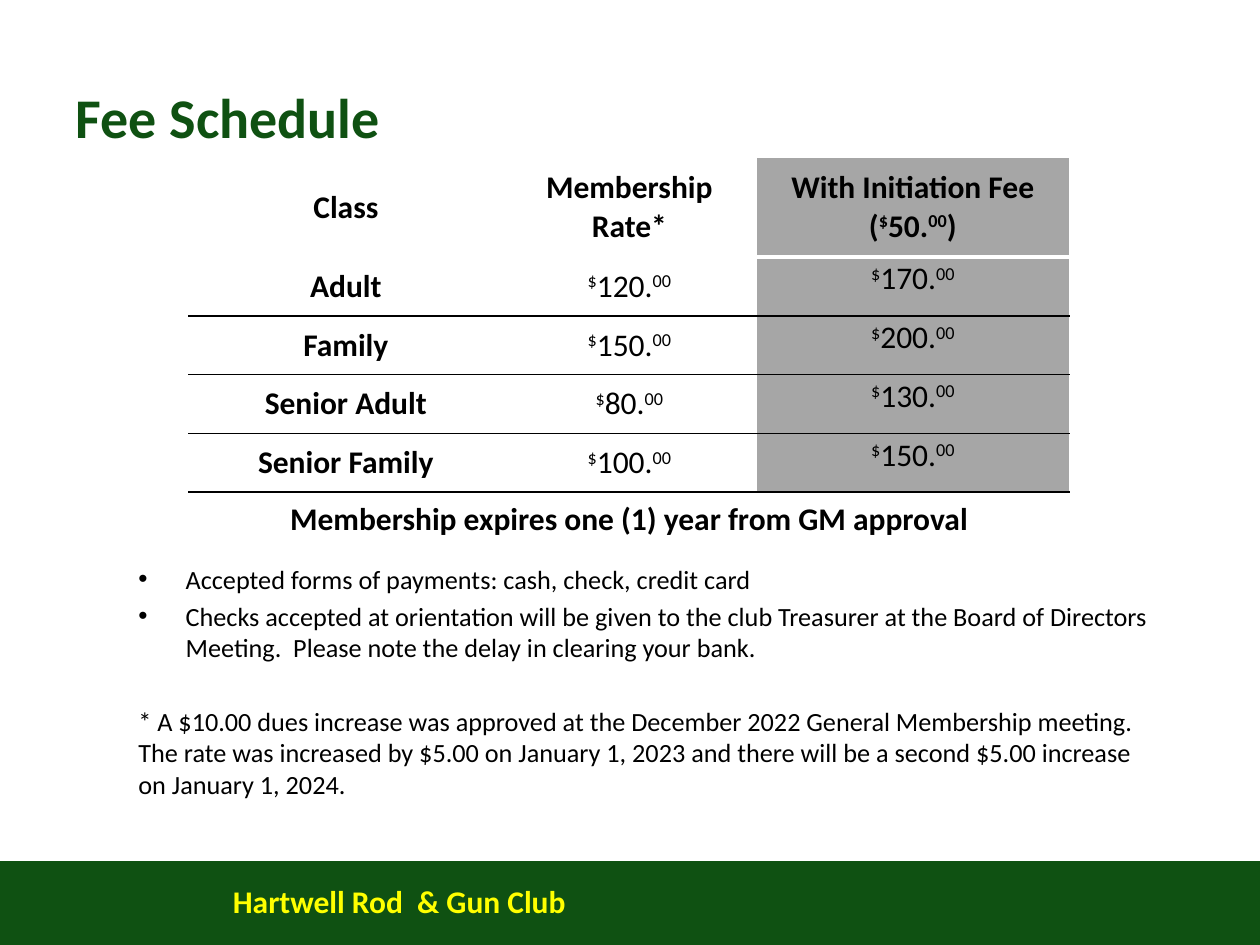
from lxml import etree
from pptx import Presentation
from pptx.dml.color import RGBColor
from pptx.enum.shapes import MSO_SHAPE
from pptx.enum.text import MSO_ANCHOR, PP_ALIGN
from pptx.oxml.ns import qn
from pptx.util import Pt

RECTANGLE = MSO_SHAPE.RECTANGLE
TOP, MIDDLE = MSO_ANCHOR.TOP, MSO_ANCHOR.MIDDLE
LEFT, CENTER = PP_ALIGN.LEFT, PP_ALIGN.CENTER

GREEN = RGBColor(0x0F, 0x51, 0x12)
YELLOW = RGBColor(0xFF, 0xFF, 0x00)
BLACK = RGBColor(0x00, 0x00, 0x00)
WHITE = RGBColor(0xFF, 0xFF, 0xFF)
GRAY = RGBColor(0xA6, 0xA6, 0xA6)

FEES = [
    ("Adult", 120, 170),
    ("Family", 150, 200),
    ("Senior Adult", 80, 130),
    ("Senior Family", 100, 150),
]
EXPIRY = "Membership expires one (1) year from GM approval"
PAYMENT_POINTS = [
    "Accepted forms of payments: cash, check, credit card",
    "Checks accepted at orientation will be given to the club Treasurer at the "
    "Board of Directors Meeting.  Please note the delay in clearing your bank.",
]
DUES_NOTE = (
    "* A $10.00 dues increase was approved at the December 2022 General "
    "Membership meeting.  The rate was increased by $5.00 on January 1, 2023 "
    "and there will be a second $5.00 increase on January 1, 2024."
)


def set_all(target, values):
    for name, value in values.items():
        setattr(target, name, value)


def add_run(paragraph, text, size, color, bold=False, raised=False):
    run = paragraph.add_run()
    run.text = text
    set_all(run.font, {"name": "Calibri", "size": Pt(size), "bold": bold})
    run.font.color.rgb = color
    if raised:
        run.font._element.set("baseline", "30000")


def money(amount):
    return [("$", True), (f"{amount}.", False), ("00", True)]


def add_title(slide, text):
    title = slide.shapes.title
    set_all(title, {"left": Pt(36), "top": Pt(21.6), "width": Pt(648), "height": Pt(90)})
    title.text_frame.vertical_anchor = MIDDLE
    paragraph = title.text_frame.paragraphs[0]
    paragraph.alignment = LEFT
    add_run(paragraph, text, 32, GREEN, bold=True)


def add_text_frame(slide, left, top, width, height):
    frame = slide.shapes.add_textbox(Pt(left), Pt(top), Pt(width), Pt(height)).text_frame
    frame.word_wrap = True
    return frame


def add_footer(slide, text):
    band = slide.shapes.add_shape(RECTANGLE, Pt(0), Pt(492), Pt(720), Pt(48))
    band.shadow.inherit = False
    band.fill.solid()
    band.fill.fore_color.rgb = GREEN
    band.line.fill.background()
    frame = add_text_frame(slide, 126, 500.4, 408, 29)
    add_run(frame.paragraphs[0], text, 18, YELLOW, bold=True)


def set_border(cell, side, color, width):
    properties = cell._tc.get_or_add_tcPr()
    line = etree.SubElement(properties, qn(f"a:ln{side}"), w=str(Pt(width)))
    fill = etree.SubElement(line, qn("a:solidFill"))
    etree.SubElement(fill, qn("a:srgbClr"), val=str(color))


def fill_cell(cell, lines, bold, anchor, shade, top, bottom):
    set_all(cell, {
        "margin_left": Pt(2), "margin_right": Pt(2),
        "margin_top": Pt(1.5), "margin_bottom": Pt(1.5),
        "vertical_anchor": anchor,
    })
    borders = {"L": (WHITE, 1), "R": (WHITE, 1), "T": top, "B": bottom}
    for side, (color, width) in borders.items():
        set_border(cell, side, color, width)
    if shade:
        cell.fill.solid()
        cell.fill.fore_color.rgb = shade
    else:
        cell.fill.background()
    frame = cell.text_frame
    for index, pieces in enumerate(lines):
        paragraph = frame.add_paragraph() if index else frame.paragraphs[0]
        paragraph.alignment = CENTER
        for text, raised in pieces:
            add_run(paragraph, text, 18, BLACK, bold, raised)


def add_fee_table(slide):
    header = [
        [[("Class", False)]],
        [[("Membership", False)], [("Rate*", False)]],
        [[("With Initiation Fee (", False), *money(50), (")", False)]],
    ]
    rows = [header]
    rows += [[[[(name, False)]], [money(rate)], [money(total)]] for name, rate, total in FEES]
    rows.append([[[(EXPIRY, False)]], [], []])
    last = len(rows) - 1
    widths = [179.3, 144.7, 179.3]
    heights = [56.9] + [33.6] * len(FEES) + [31]

    table = slide.shapes.add_table(
        len(rows), len(widths), Pt(108), Pt(90), Pt(sum(widths)), Pt(sum(heights))
    ).table
    set_all(table, {"first_row": False, "horz_banding": False})
    for column, width in zip(table.columns, widths):
        column.width = Pt(width)
    for row, height in zip(table.rows, heights):
        row.height = Pt(height)

    rules = [(WHITE, 1), (WHITE, 3)] + [(BLACK, 1)] * len(FEES) + [(WHITE, 1)]
    for r, contents in enumerate(rows):
        is_fee = 0 < r < last
        for c, lines in enumerate(contents):
            is_total = c == 2 and r < last
            fill_cell(
                table.cell(r, c), lines,
                bold=c == 0 or not is_fee,
                anchor=TOP if is_total and is_fee else MIDDLE,
                shade=GRAY if is_total else None,
                top=rules[r], bottom=rules[r + 1],
            )
    table.cell(last, 0).merge(table.cell(last, 2))


def add_notes(slide):
    frame = add_text_frame(slide, 72, 318.2, 600, 132)
    for index, text in enumerate(PAYMENT_POINTS):
        paragraph = frame.add_paragraph() if index else frame.paragraphs[0]
        properties = paragraph._p.get_or_add_pPr()
        set_all(paragraph, {"space_before": Pt(3 if index else 0)})
        properties.set("marL", str(Pt(27)))
        properties.set("indent", str(Pt(-27)))
        etree.SubElement(properties, qn("a:buFont"), typeface="Arial")
        etree.SubElement(properties, qn("a:buChar"), char="•")
        add_run(paragraph, text, 15, BLACK)
    footnote = frame.add_paragraph()
    footnote.space_before = Pt(24)
    add_run(footnote, DUES_NOTE, 15, BLACK)


def main():
    deck = Presentation()
    set_all(deck, {"slide_width": Pt(720), "slide_height": Pt(540)})
    slide = deck.slides.add_slide(deck.slide_layouts[5])
    add_footer(slide, "Hartwell Rod  & Gun Club")
    add_title(slide, "Fee Schedule")
    add_fee_table(slide)
    add_notes(slide)
    deck.save("out.pptx")


if __name__ == "__main__":
    main()
